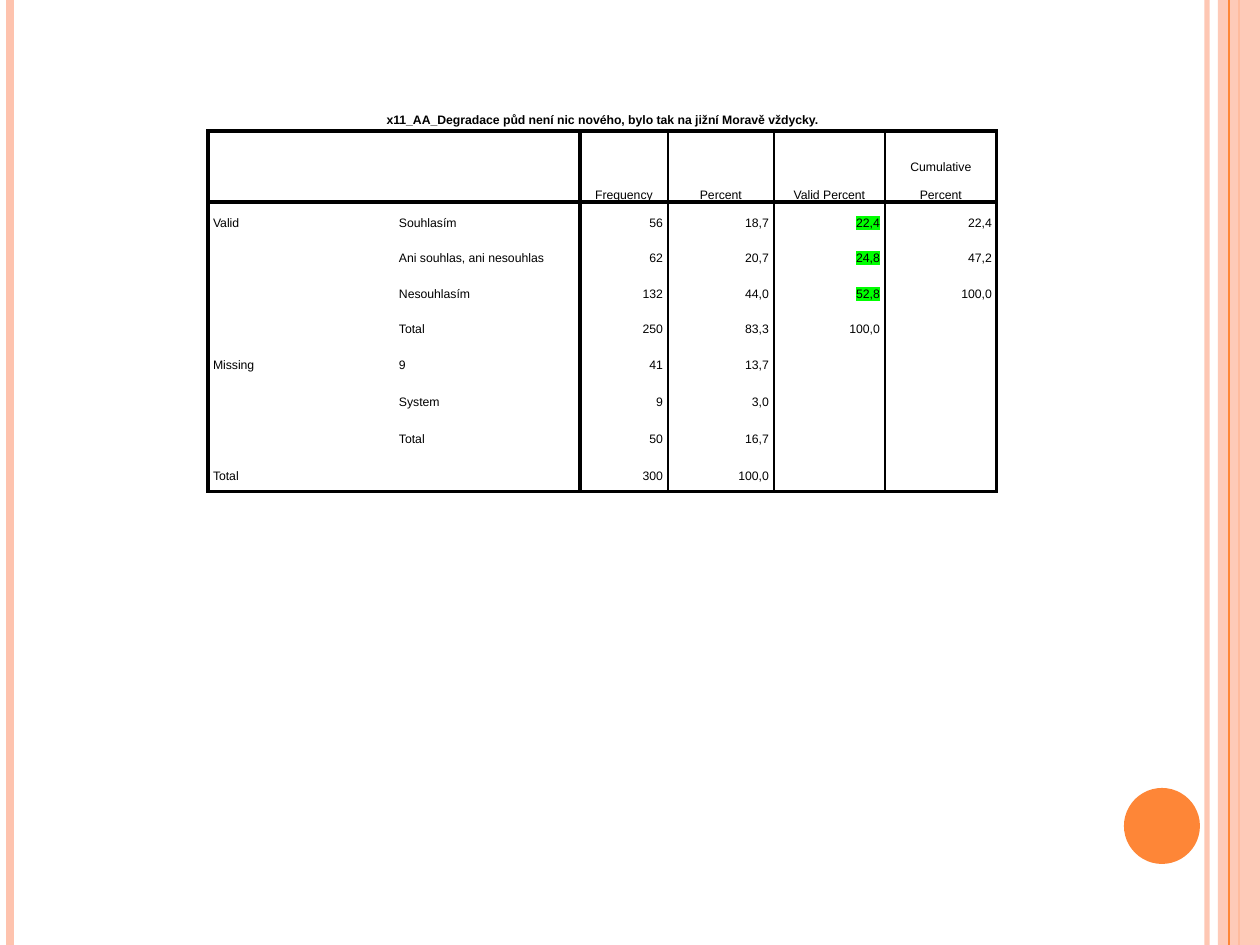
from lxml.etree import SubElement
from pptx import Presentation
from pptx.dml.color import RGBColor
from pptx.enum.shapes import MSO_CONNECTOR as Connector, MSO_SHAPE as Shape
from pptx.enum.text import MSO_ANCHOR as Anchor, PP_ALIGN as Align
from pptx.oxml.ns import qn
from pptx.util import Emu, Pt

BLACK = RGBColor(0x00, 0x00, 0x00)
WHITE = RGBColor(0xFF, 0xFF, 0xFF)
GREEN = RGBColor(0x00, 0xFF, 0x00)
ORANGE = RGBColor(0xFE, 0x86, 0x37)
PEACH = RGBColor(0xFE, 0xC3, 0xAE)

WIDTH, HEIGHT = 1260, 945
THICK, THIN = 2.25, 1
COLUMN_EDGES = {0: THICK, 2: THICK, 3: THIN, 4: THIN, 5: THIN, 6: THICK}
ROW_EDGES = {1: THICK, 2: THICK, 10: THICK}
COLUMN_WIDTHS = [186, 186, 88, 106, 111, 112]
ROW_HEIGHTS = [35, 71] + [35, 36] * 2 + [37] * 4
MERGES = [((0, 0), (0, 5)), ((1, 0), (1, 1)), ((2, 0), (5, 0)),
          ((6, 0), (8, 0)), ((9, 0), (9, 1))]
HIGHLIGHTED = {(2, 4), (3, 4), (4, 4)}
FREQUENCIES = [
    ["x11_AA_Degradace půd není nic nového, bylo tak na jižní Moravě vždycky.",
     "", "", "", "", ""],
    ["", "", "Frequency", "Percent", "Valid Percent", "Cumulative Percent"],
    ["Valid", "Souhlasím", "56", "18,7", "22,4", "22,4"],
    ["", "Ani souhlas, ani nesouhlas", "62", "20,7", "24,8", "47,2"],
    ["", "Nesouhlasím", "132", "44,0", "52,8", "100,0"],
    ["", "Total", "250", "83,3", "100,0", ""],
    ["Missing", "9", "41", "13,7", "", ""],
    ["", "System", "9", "3,0", "", ""],
    ["", "Total", "50", "16,7", "", ""],
    ["Total", "", "300", "100,0", "", ""],
]


def px(length):
    return Emu(round(length * 914400 / 126))


def add_color(parent, color):
    SubElement(parent, qn("a:srgbClr"), val=str(color))


def set_alpha(part, percent):
    for color in part.element.spPr.iter(qn("a:srgbClr")):
        SubElement(color, qn("a:alpha"), val=str(percent * 1000))


def write_text(frame, text, *, font, size, color=BLACK, bold=False,
               align=Align.LEFT, highlight=None, spacing=16, indent=5):
    paragraph = frame.paragraphs[0]
    paragraph.alignment = align
    paragraph.line_spacing = Pt(spacing)
    properties = paragraph._p.get_or_add_pPr()
    for side in ("marL", "marR"):
        properties.set(side, str(px(indent)))
    properties.set("indent", "0")
    if not text:
        SubElement(paragraph._p, qn("a:endParaRPr"), sz=str(size * 100))
        return
    run = paragraph.add_run()
    run.text = text
    run.font.size = Pt(size)
    run.font.bold = bold
    run.font.color.rgb = color
    if highlight is not None:
        add_color(SubElement(run.font._element, qn("a:highlight")), highlight)
    run.font.name = font


class SlideBuilder:
    def __init__(self, slide, font="Arial", size=7):
        self.slide = slide
        self.font = font
        self.size = size

    def stripe(self, x, color, width, alpha=None):
        line = self.slide.shapes.add_connector(
            Connector.STRAIGHT, px(x), px(0), px(x), px(HEIGHT))
        line.line.color.rgb = color
        line.line.width = Pt(width)
        if alpha:
            set_alpha(line, alpha)
        SubElement(line.element.spPr, qn("a:effectLst"))

    def shape(self, kind, x, y, width, height, color, alpha=None):
        shape = self.slide.shapes.add_shape(
            kind, px(x), px(y), px(width), px(height))
        shape.shadow.inherit = False
        shape.fill.solid()
        shape.fill.fore_color.rgb = color
        shape.line.fill.background()
        if alpha:
            set_alpha(shape, alpha)

    def borders(self, cell, row, column):
        right = column + (cell.span_width if cell.is_merge_origin else 1)
        bottom = row + (cell.span_height if cell.is_merge_origin else 1)
        verticals = COLUMN_EDGES if row else {}
        edges = [("a:lnL", verticals.get(column)), ("a:lnR", verticals.get(right)),
                 ("a:lnT", ROW_EDGES.get(row)), ("a:lnB", ROW_EDGES.get(bottom))]
        properties = cell._tc.get_or_add_tcPr()
        for position, (tag, width) in enumerate(edges):
            border = SubElement(properties, qn(tag), w=str(Pt(width or 0)))
            if width:
                add_color(SubElement(border, qn("a:solidFill")), BLACK)
            else:
                SubElement(border, qn("a:noFill"))
            properties.insert(position, border)

    def cell(self, cell, row, column, text):
        cell.margin_left = cell.margin_right = 0
        cell.margin_top = cell.margin_bottom = 0
        cell.vertical_anchor = {0: Anchor.MIDDLE, 1: Anchor.BOTTOM}.get(row, Anchor.TOP)
        cell.fill.solid()
        cell.fill.fore_color.rgb = WHITE
        self.borders(cell, row, column)
        body_align = Align.RIGHT if column > 1 else Align.LEFT
        write_text(cell.text_frame, text, font=self.font, size=self.size,
                   bold=row == 0, align=Align.CENTER if row < 2 else body_align,
                   highlight=GREEN if (row, column) in HIGHLIGHTED else None)

    def table(self, x, y, rows):
        table = self.slide.shapes.add_table(
            len(rows), len(COLUMN_WIDTHS), px(x), px(y),
            px(sum(COLUMN_WIDTHS)), px(sum(ROW_HEIGHTS))).table
        table.first_row = table.horz_banding = False
        for column, width in zip(table.columns, COLUMN_WIDTHS):
            column.width = px(width)
        for row, height in zip(table.rows, ROW_HEIGHTS):
            row.height = px(height)
        for first, last in MERGES:
            table.cell(*first).merge(table.cell(*last))
        for row, texts in enumerate(rows):
            for column, text in enumerate(texts):
                self.cell(table.cell(row, column), row, column, text)


def main():
    deck = Presentation()
    deck.slide_width, deck.slide_height = px(WIDTH), px(HEIGHT)
    builder = SlideBuilder(deck.slides.add_slide(deck.slide_layouts[6]))
    builder.stripe(1207, PEACH, 3, alpha=93)
    builder.stripe(10, PEACH, 4.5)
    builder.stripe(1239, ORANGE, 1.5)
    builder.shape(Shape.RECTANGLE, 1218, 0, 42, HEIGHT, PEACH, alpha=87)
    builder.stripe(1229, ORANGE, 0.75)
    builder.shape(Shape.OVAL, 1124, 788, 76, 76, ORANGE)
    builder.table(208, 96, FREQUENCIES)
    deck.save("out.pptx")


if __name__ == "__main__":
    main()
